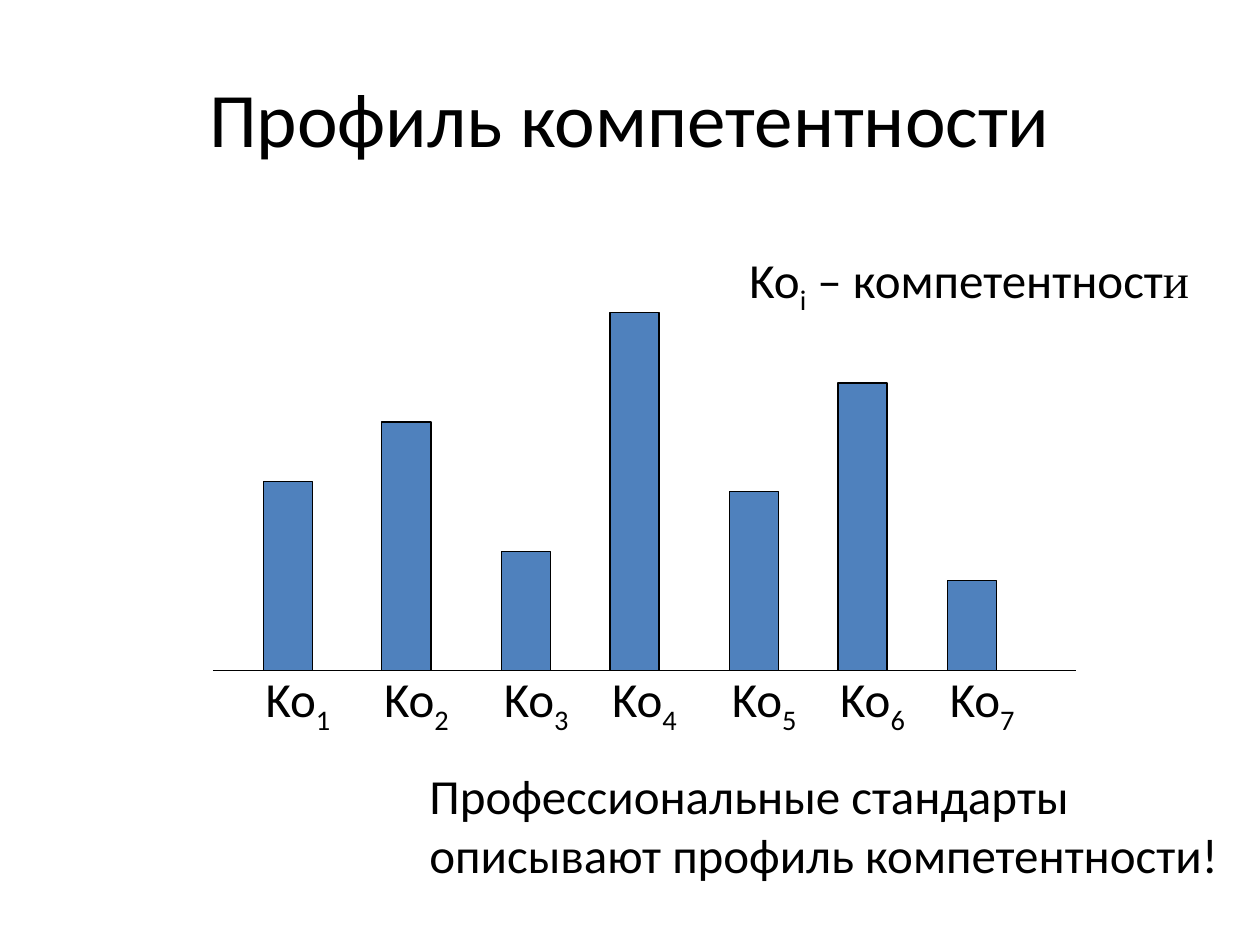
"""Build the slide with a bar profile of competences."""
from dataclasses import dataclass

from lxml import etree
from pptx import Presentation
from pptx.dml.color import RGBColor
from pptx.enum.shapes import MSO_CONNECTOR, MSO_SHAPE
from pptx.enum.text import MSO_ANCHOR, MSO_AUTO_SIZE, PP_ALIGN
from pptx.oxml.ns import qn
from pptx.slide import Slide
from pptx.util import Inches, Pt

RECT = MSO_SHAPE.RECTANGLE
STRAIGHT = MSO_CONNECTOR.STRAIGHT
MIDDLE = MSO_ANCHOR.MIDDLE
CENTER = PP_ALIGN.CENTER
GROW = MSO_AUTO_SIZE.SHAPE_TO_FIT_TEXT


@dataclass(frozen=True)
class Theme:
    """Colours, fonts and sizes of the slide."""
    ink: RGBColor = RGBColor(0x00, 0x00, 0x00)
    fill: RGBColor = RGBColor(0x4F, 0x81, 0xBD)
    font: str = "Calibri"
    serif: str = "Times New Roman"
    title: float = 44
    body: float = 28
    line: float = 0.75


@dataclass(frozen=True)
class Bar:
    """One bar, by its left edge and height in inches."""
    left: float
    height: float


@dataclass(frozen=True)
class Piece:
    """A run of text, lowered or in another font on demand."""
    text: str
    sub: bool = False
    font: str = Theme.font


THEME = Theme()
BASE = 5.32
BAR_WIDTH = 0.39
BARS = [
    Bar(2.09, 1.5),
    Bar(3.03, 1.97),
    Bar(3.98, 0.94),
    Bar(4.84, 2.84),
    Bar(5.79, 1.42),
    Bar(6.65, 2.28),
    Bar(7.52, 0.71),
]


def add_runs(para, pieces: list[Piece], size: float) -> None:
    """Write the pieces into a paragraph."""
    for piece in pieces:
        run = para.add_run()
        run.text = piece.text
        run.font.name = piece.font
        run.font.size = Pt(size)
        run.font.color.rgb = THEME.ink
        if piece.sub:
            run.font._element.set("baseline", "-25000")


def add_title(slide: Slide, text: str) -> None:
    """Place and fill the title."""
    title = slide.shapes.title
    title.left, title.top = Inches(0.5), Inches(0.3)
    title.width, title.height = Inches(9), Inches(1.25)
    title.text_frame.vertical_anchor = MIDDLE
    para = title.text_frame.paragraphs[0]
    para.alignment = CENTER
    add_runs(para, [Piece(text)], THEME.title)


def add_axis(slide: Slide, start: float, end: float) -> None:
    """Draw the line on which the bars stand."""
    axis = slide.shapes.add_connector(
        STRAIGHT, Inches(start), Inches(BASE), Inches(end), Inches(BASE))
    axis.line.color.rgb = THEME.ink
    axis.line.width = Pt(THEME.line)
    etree.SubElement(axis._element.spPr, qn("a:effectLst"))


def add_bar(slide: Slide, bar: Bar) -> None:
    """Draw one bar up from the base line."""
    shape = slide.shapes.add_shape(
        RECT, Inches(bar.left), Inches(BASE - bar.height),
        Inches(BAR_WIDTH), Inches(bar.height))
    shape.shadow.inherit = False
    shape.fill.solid()
    shape.fill.fore_color.rgb = THEME.fill
    shape.line.color.rgb = THEME.ink
    shape.line.width = Pt(THEME.line)


def add_text(slide: Slide, left: float, top: float, width: float,
             height: float, lines: list[list[Piece]]) -> None:
    """Add a box that fits its lines of text."""
    box = slide.shapes.add_textbox(
        Inches(left), Inches(top), Inches(width), Inches(height))
    frame = box.text_frame
    frame.word_wrap = False
    frame.auto_size = GROW
    for index, pieces in enumerate(lines):
        para = frame.add_paragraph() if index else frame.paragraphs[0]
        add_runs(para, pieces, THEME.body)


def main() -> None:
    """Build and save the slide."""
    deck = Presentation()
    deck.slide_width, deck.slide_height = Inches(10), Inches(7.5)
    slide = deck.slides.add_slide(deck.slide_layouts[5])
    add_title(slide, "Профиль компетентности")
    add_axis(slide, 1.69, 8.54)
    for bar in BARS:
        add_bar(slide, bar)
    for number, bar in enumerate(BARS, 1):
        label = [Piece("Ko"), Piece(str(number), sub=True)]
        add_text(slide, bar.left - 0.08, 5.26, 0.74, 0.57, [label])
    legend = [Piece("Ko"), Piece("i", sub=True),
              Piece(" – компетентност"), Piece("и", font=THEME.serif)]
    add_text(slide, 5.85, 1.93, 3.73, 0.57, [legend])
    add_text(slide, 3.31, 6.03, 6.53, 1.04, [
        [Piece("Профессиональные стандарты")],
        [Piece("описывают профиль компетентности!")],
    ])
    deck.save("out.pptx")


if __name__ == "__main__":
    main()
